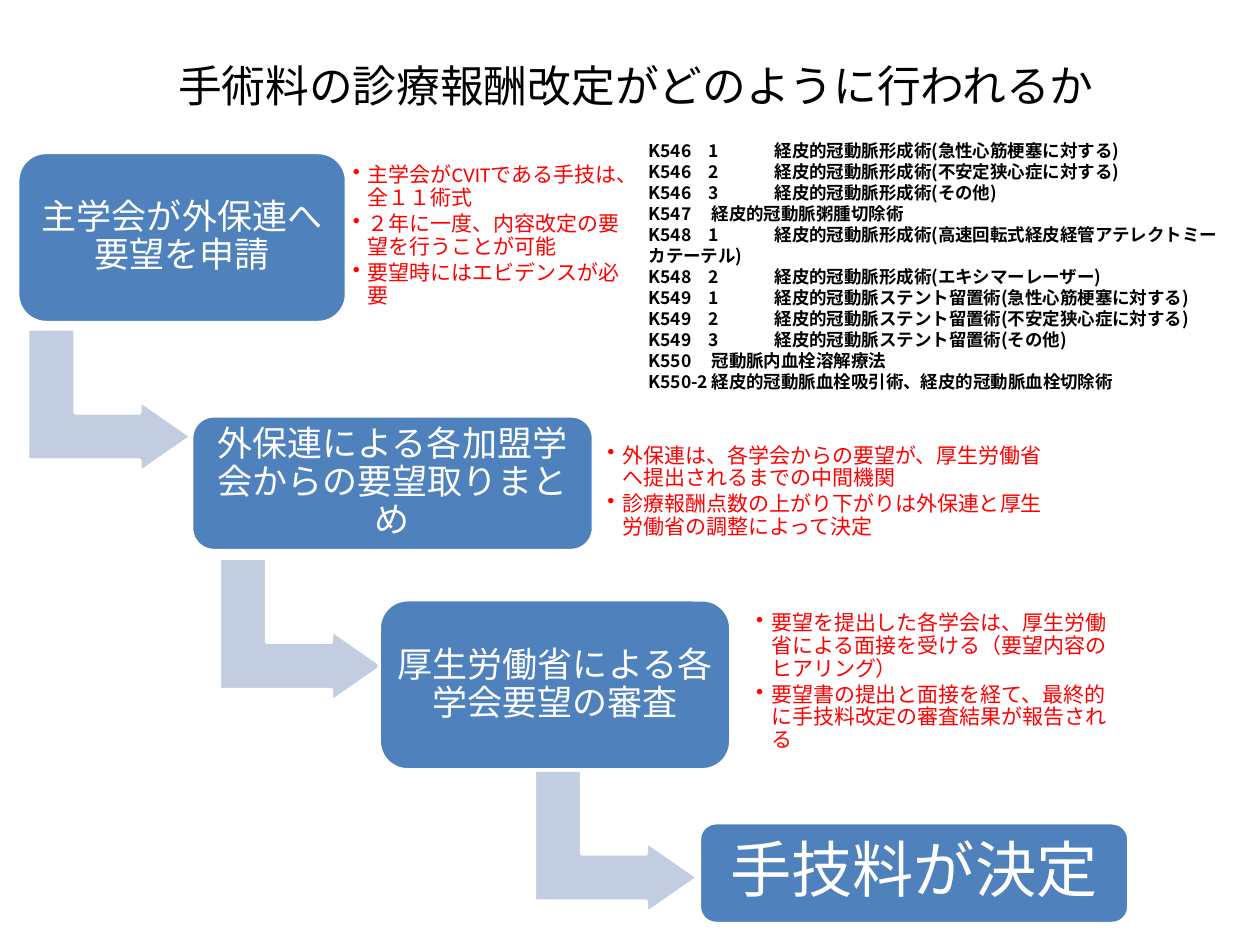
import pptx
import pptx.util
import pptx.dml.color
import pptx.enum.lang
import pptx.enum.shapes
import pptx.enum.text
import pptx.oxml.ns
from lxml import etree

WIDE, HIGH = 10, 7.5
COL, ROW = WIDE / 100, HIGH / 75
HUES = {"box": "4F81BD", "arrow": "C2CDE1", "edge": "FFFFFF",
        "label": "FFFFFF", "note": "FF0000", "ink": "000000"}
FACE, ASIA = "Calibri", "Noto Sans CJK JP"
KIND = pptx.enum.shapes.MSO_SHAPE
ALIGN = pptx.enum.text.PP_ALIGN
MID = pptx.enum.text.MSO_ANCHOR.MIDDLE

TITLE = "手術料の診療報酬改定がどのように行われるか"
STEPS = [
    ((1.4, 12.1, 26.1, 13.5), "主学会が外保連へ要望を申請", 20, 0.08),
    ((15.2, 33, 31.9, 10.7), "外保連による各加盟学会からの要望取りまとめ", 20, 0.08),
    ((30.1, 47.6, 27.9, 13.5), "厚生労働省による各学会要望の審査", 20, 0.08),
    ((55.5, 65.3, 34.1, 8), "手技料が決定", 35, 0.15),
]
TURNS = [(3, 25.3), (18.2, 43.5), (43.2, 60.3)]
NOTES = [
    ((27.5, 12.8, 23.3, 11.9),
     ["主学会がCVITである手技は、全１１術式",
      "２年に一度、内容改定の要望を行うことが可能",
      "要望時にはエビデンスが必要"]),
    ((47.7, 33.6, 37, 10.9),
     ["外保連は、各学会からの要望が、厚生労働省へ提出されるまでの中間機関",
      "診療報酬点数の上がり下がりは外保連と厚生労働省の調整によって決定"]),
    ((59.5, 48.7, 29.5, 10.9),
     ["要望を提出した各学会は、厚生労働省による面接を受ける（要望内容のヒアリング）",
      "要望書の提出と面接を経て、最終的に手技料改定の審査結果が報告される"]),
]
CODES = [
    "K546　1\t経皮的冠動脈形成術(急性心筋梗塞に対する)",
    "K546　2\t経皮的冠動脈形成術(不安定狭心症に対する)",
    "K546　3\t経皮的冠動脈形成術(その他)",
    "K547\t経皮的冠動脈粥腫切除術",
    "K548　1\t経皮的冠動脈形成術(高速回転式経皮経管アテレクトミーカテーテル)",
    "K548　2\t経皮的冠動脈形成術(エキシマーレーザー)",
    "K549　1\t経皮的冠動脈ステント留置術(急性心筋梗塞に対する)",
    "K549　2\t経皮的冠動脈ステント留置術(不安定狭心症に対する)",
    "K549　3\t経皮的冠動脈ステント留置術(その他)",
    "K550\t冠動脈内血栓溶解療法",
    "K550-2\t経皮的冠動脈血栓吸引術、経皮的冠動脈血栓切除術",
]


def place(area):
    units = (COL, ROW, COL, ROW)
    return [pptx.util.Inches(size * unit) for size, unit in zip(area, units)]


def tint(hue):
    return pptx.dml.color.RGBColor.from_string(HUES[hue])


def apply(item, form):
    for name, value in form.items():
        setattr(item, name, value)


def write(frame, lines, hue, font, para=None, inset=None, anchor=MID):
    apply(frame, {"word_wrap": True, "vertical_anchor": anchor})
    if inset is not None:
        sides = ("left", "top", "right", "bottom")
        apply(frame, {f"margin_{side}": pptx.util.Inches(inset) for side in sides})
    base = {"name": FACE, "bold": False,
            "language_id": pptx.enum.lang.MSO_LANGUAGE_ID.JAPANESE}
    for rank, line in enumerate(lines):
        part = frame.add_paragraph() if rank else frame.paragraphs[0]
        apply(part, para or {})
        run = part.add_run()
        run.text = line
        apply(run.font, {**base, **font})
        run.font.color.rgb = tint(hue)
        asia = etree.SubElement(run.font._element, pptx.oxml.ns.qn("a:ea"))
        asia.set("typeface", ASIA)


def add_text(slide, area, *args, **opts):
    box = slide.shapes.add_textbox(*place(area))
    write(box.text_frame, *args, **opts)
    return box


def add_shape(slide, kind, area, hue):
    shape = slide.shapes.add_shape(kind, *place(area))
    shape.shadow.inherit = False
    shape.fill.solid()
    shape.fill.fore_color.rgb = tint(hue)
    shape.line.color.rgb = tint("edge")
    shape.line.width = pptx.util.Pt(2)
    return shape


def add_step(slide, area, text, size, inset):
    shape = add_shape(slide, KIND.ROUNDED_RECTANGLE, area, "box")
    write(shape.text_frame, [text], "label", {"size": pptx.util.Pt(size)},
          {"alignment": ALIGN.CENTER, "line_spacing": 0.9}, inset)


def add_turn(slide, left, top):
    shape = add_shape(slide, KIND.BENT_UP_ARROW, (left, top, 11.4, 13), "arrow")
    shape.rotation = 90
    for rank, share in enumerate((0.33, 0.25, 0.36)):
        shape.adjustments[rank] = share


def add_note(slide, area, lines):
    box = add_text(slide, area, lines, "note", {"size": pptx.util.Pt(12)},
                   {"line_spacing": 0.9, "space_after": pptx.util.Pt(2)}, 0.05)
    dent = pptx.util.Inches(0.12)
    for part in box.text_frame.paragraphs:
        props = part._p.get_or_add_pPr()
        props.set("marL", str(dent))
        props.set("indent", str(-dent))
        mark = etree.SubElement(props, pptx.oxml.ns.qn("a:buChar"))
        mark.set("char", "•")


def main():
    deck = pptx.Presentation()
    apply(deck, {"slide_width": pptx.util.Inches(WIDE),
                 "slide_height": pptx.util.Inches(HIGH)})
    slide = deck.slides.add_slide(deck.slide_layouts[6])
    add_text(slide, (2.2, 3, 96.5, 7.5), [TITLE], "ink",
             {"size": pptx.util.Pt(25)}, {"alignment": ALIGN.CENTER})
    for turn in TURNS:
        add_turn(slide, *turn)
    for step in STEPS:
        add_step(slide, *step)
    for note in NOTES:
        add_note(slide, *note)
    add_text(slide, (50.5, 10.6, 47.6, 21.2), CODES, "ink",
             {"size": pptx.util.Pt(10), "name": ASIA, "bold": True},
             anchor=pptx.enum.text.MSO_ANCHOR.TOP)
    deck.save("out.pptx")


if __name__ == "__main__":
    main()
